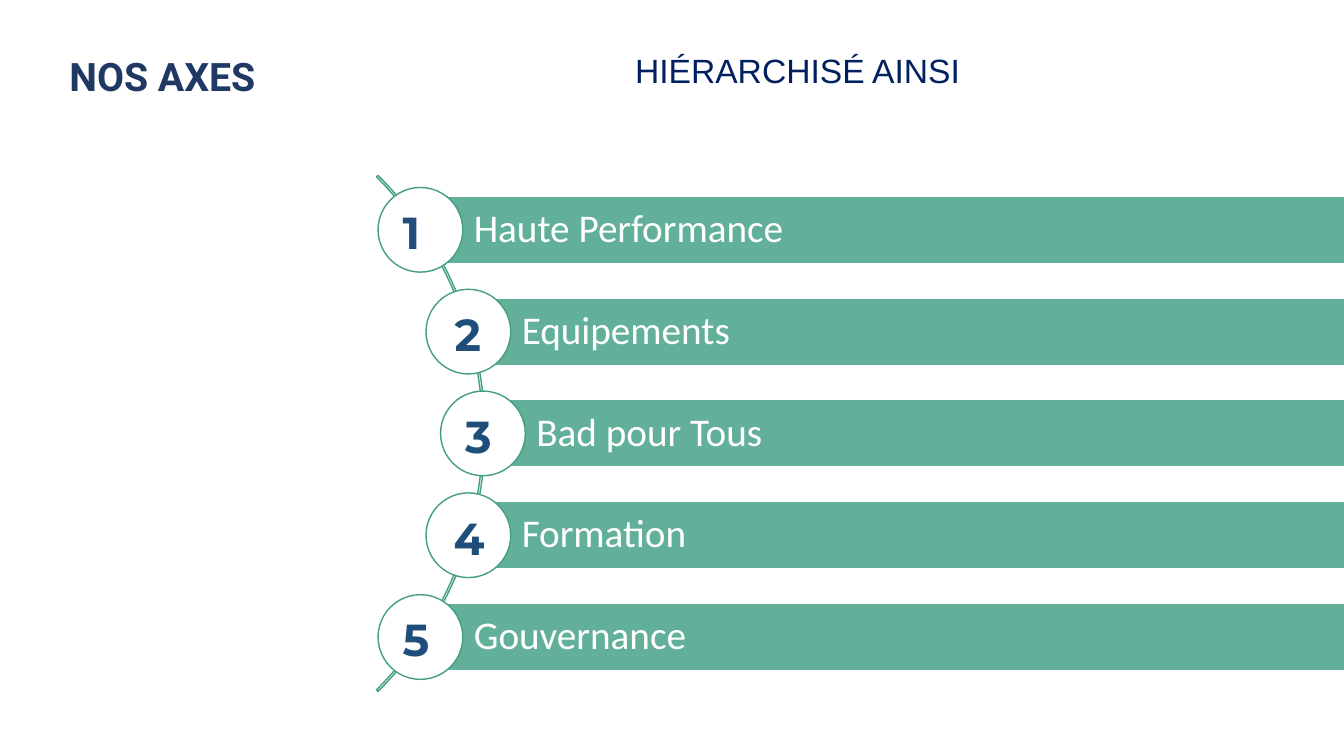
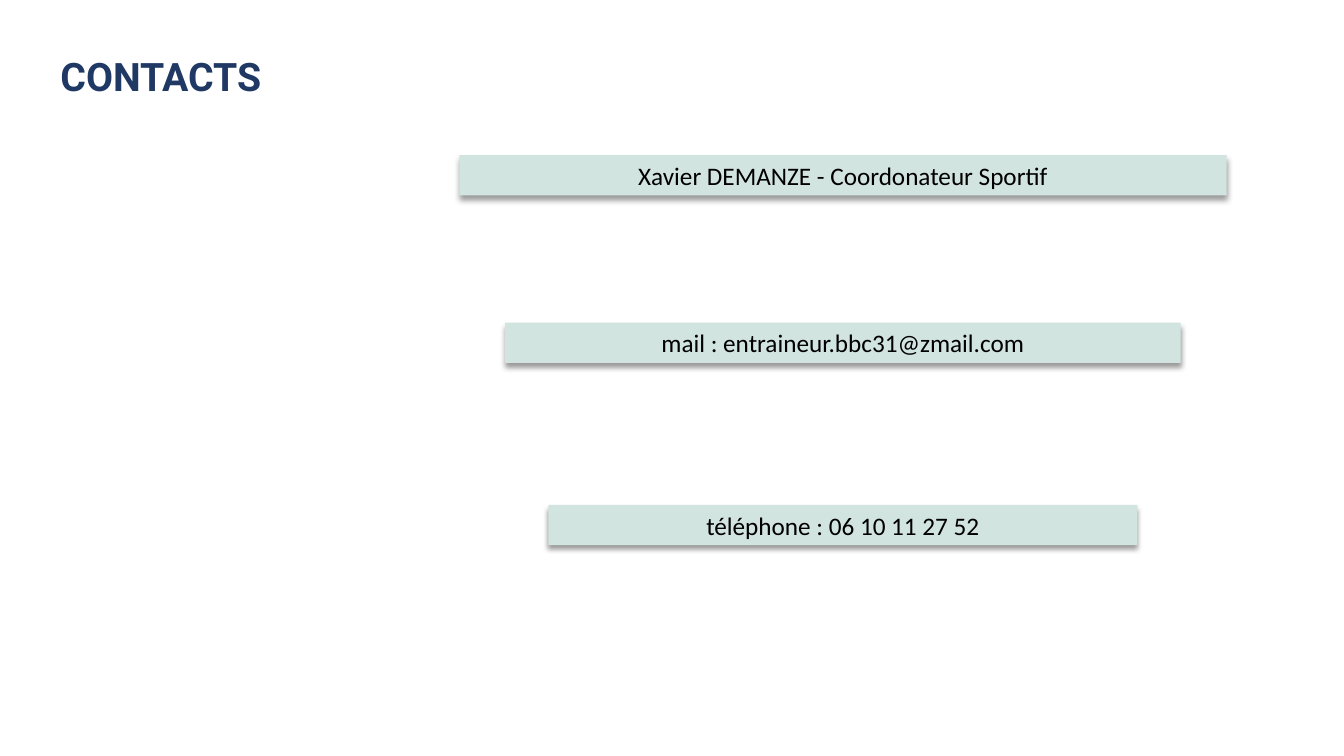
import math

import lxml.etree
import pptx
import pptx.dml.color
import pptx.enum.shapes
import pptx.enum.text
import pptx.oxml.ns
import pptx.util

Inches = pptx.util.Inches
Pt = pptx.util.Pt
RGBColor = pptx.dml.color.RGBColor
Shape = pptx.enum.shapes.MSO_SHAPE
Align = pptx.enum.text.PP_ALIGN
Anchor = pptx.enum.text.MSO_ANCHOR
AutoSize = pptx.enum.text.MSO_AUTO_SIZE

# Content
AXES_TITLE = "NOS AXES"
AXES_HEADING = "HIÉRARCHISÉ AINSI"
AXES = ["Haute Performance", "Equipements", "Bad pour Tous", "Formation", "Gouvernance"]
NUMBER_INDENTS = [0.12, 0.16, 0.12, 0.15, 0.12]
CONTACTS_TITLE = "CONTACTS"
CONTACTS = [  # text, top, width
    ("Xavier DEMANZE - Coordonateur Sportif", 1.54, 7.61),
    ("mail : entraineur.bbc31@zmail.com", 3.2, 6.7),
    ("téléphone : 06 10 11 27 52", 5.01, 5.84),
]

# Colours and text styles
WHITE = RGBColor(0xFF, 0xFF, 0xFF)
BLACK = RGBColor(0x00, 0x00, 0x00)
GREEN = RGBColor(0x62, 0xB0, 0x99)
DARK_GREEN = RGBColor(0x43, 0x9E, 0x84)
PALE_GREEN = RGBColor(0xD2, 0xE4, 0xDF)
TITLE_BLUE = RGBColor(0x1F, 0x38, 0x64)
HEADING_BLUE = RGBColor(0x00, 0x20, 0x60)
NUMBER_BLUE = RGBColor(0x1E, 0x4E, 0x79)

TITLE_FONT = {"name": "Roboto", "size": Pt(28), "bold": True, "color": TITLE_BLUE}
HEADING_FONT = {"name": "Arial", "size": Pt(24), "color": HEADING_BLUE}
AXIS_FONT = {"name": "Calibri", "size": Pt(28), "color": WHITE}
NUMBER_FONT = {"name": "Montserrat", "size": Pt(32), "bold": True, "color": NUMBER_BLUE}
CONTACT_FONT = {"name": "Calibri", "size": Pt(18), "color": BLACK}

# Geometry in inches
ARC_X, ARC_Y, ARC_RADIUS = 1.19, 4.3, 3.62
CIRCLE_PATH_RADIUS = 3.6
AXIS_STEP = 1.01
BAR_RIGHT, BAR_HEIGHT = 13.37, 0.67
CIRCLE_SIZE = 0.84
CONTACT_CENTER, CONTACT_HEIGHT = 8.36, 0.4


def write(shape, text, font, align=Align.LEFT, anchor=Anchor.TOP,
          insets=(0.1, 0.05, 0.1, 0.05), auto_size=AutoSize.NONE, line_spacing=None):
    frame = shape.text_frame
    left, top, right, bottom = (Inches(inset) for inset in insets)
    frame_format = {
        "word_wrap": True, "auto_size": auto_size, "vertical_anchor": anchor,
        "margin_left": left, "margin_top": top,
        "margin_right": right, "margin_bottom": bottom,
    }
    for name, value in frame_format.items():
        setattr(frame, name, value)
    paragraph = frame.paragraphs[0]
    paragraph.alignment = align
    paragraph.line_spacing = line_spacing
    run = paragraph.add_run()
    run.text = text
    for name, value in font.items():
        if name == "color":
            run.font.color.rgb = value
        else:
            setattr(run.font, name, value)


def add_shape(slide, kind, left, top, width, height, fill=None, line=None):
    shape = slide.shapes.add_shape(
        kind, Inches(left), Inches(top), Inches(width), Inches(height))
    shape.shadow.inherit = False
    if fill is None:
        shape.fill.background()
    else:
        shape.fill.solid()
        shape.fill.fore_color.rgb = fill
    if line is None:
        shape.line.fill.background()
    else:
        shape.line.color.rgb = line
        shape.line.width = Pt(1)
    return shape


def add_shadow(shape):
    qn = pptx.oxml.ns.qn
    effects = shape._element.spPr.find(qn("a:effectLst"))
    shadow = lxml.etree.SubElement(
        effects, qn("a:outerShdw"), blurRad=str(Pt(4)), dist=str(Pt(3)),
        dir="5400000", algn="t", rotWithShape="0")
    color = lxml.etree.SubElement(shadow, qn("a:srgbClr"), val=str(BLACK))
    lxml.etree.SubElement(color, qn("a:alpha"), val="40000")


def add_slide(presentation, title_text, title_width):
    slide = presentation.slides.add_slide(presentation.slide_layouts[5])
    title = slide.shapes.title
    place = {"left": -0.08, "top": 0.36, "width": title_width, "height": 0.79}
    for name, value in place.items():
        setattr(title, name, Inches(value))
    title.fill.solid()
    title.fill.fore_color.rgb = WHITE
    write(title, title_text, TITLE_FONT, Align.CENTER, Anchor.MIDDLE)
    return slide


def build_axes(presentation):
    slide = add_slide(presentation, AXES_TITLE, 3.38)

    # Arc that carries the numbered circles
    arc = add_shape(slide, Shape.BLOCK_ARC, ARC_X - ARC_RADIUS, ARC_Y - ARC_RADIUS,
                    2 * ARC_RADIUS, 2 * ARC_RADIUS, line=DARK_GREEN)
    for index, value in enumerate((189, 27, 0.003)):
        arc.adjustments[index] = value

    # Bars start at the centre of their circle
    for index, (axis, indent) in enumerate(zip(AXES, NUMBER_INDENTS)):
        offset = (index - (len(AXES) - 1) / 2) * AXIS_STEP
        x = ARC_X + math.sqrt(CIRCLE_PATH_RADIUS ** 2 - offset ** 2)
        y = ARC_Y + offset
        bar = add_shape(slide, Shape.RECTANGLE, x, y - BAR_HEIGHT / 2,
                        BAR_RIGHT - x, BAR_HEIGHT, GREEN, WHITE)
        write(bar, axis, AXIS_FONT, anchor=Anchor.MIDDLE,
              insets=(0.53, 0.08, 0.08, 0.08), line_spacing=0.9)
        circle = add_shape(slide, Shape.OVAL, x - CIRCLE_SIZE / 2, y - CIRCLE_SIZE / 2,
                           CIRCLE_SIZE, CIRCLE_SIZE, WHITE, DARK_GREEN)
        write(circle, str(index + 1), NUMBER_FONT, anchor=Anchor.MIDDLE,
              insets=(indent, 0.04, 0, 0))

    # Heading
    heading = slide.shapes.add_textbox(Inches(4.87), Inches(0.45), Inches(6.08), Inches(0.5))
    write(heading, AXES_HEADING, HEADING_FONT, Align.CENTER,
          auto_size=AutoSize.SHAPE_TO_FIT_TEXT)


def build_contacts(presentation):
    slide = add_slide(presentation, CONTACTS_TITLE, 3.35)
    for text, top, width in CONTACTS:
        band = add_shape(slide, Shape.RECTANGLE, CONTACT_CENTER - width / 2, top,
                         width, CONTACT_HEIGHT, PALE_GREEN)
        add_shadow(band)
        write(band, text, CONTACT_FONT, Align.CENTER,
              auto_size=AutoSize.SHAPE_TO_FIT_TEXT)


def main():
    presentation = pptx.Presentation()
    presentation.slide_width = Inches(13.33)
    presentation.slide_height = Inches(7.5)
    build_axes(presentation)
    build_contacts(presentation)
    presentation.save("out.pptx")


if __name__ == "__main__":
    main()
